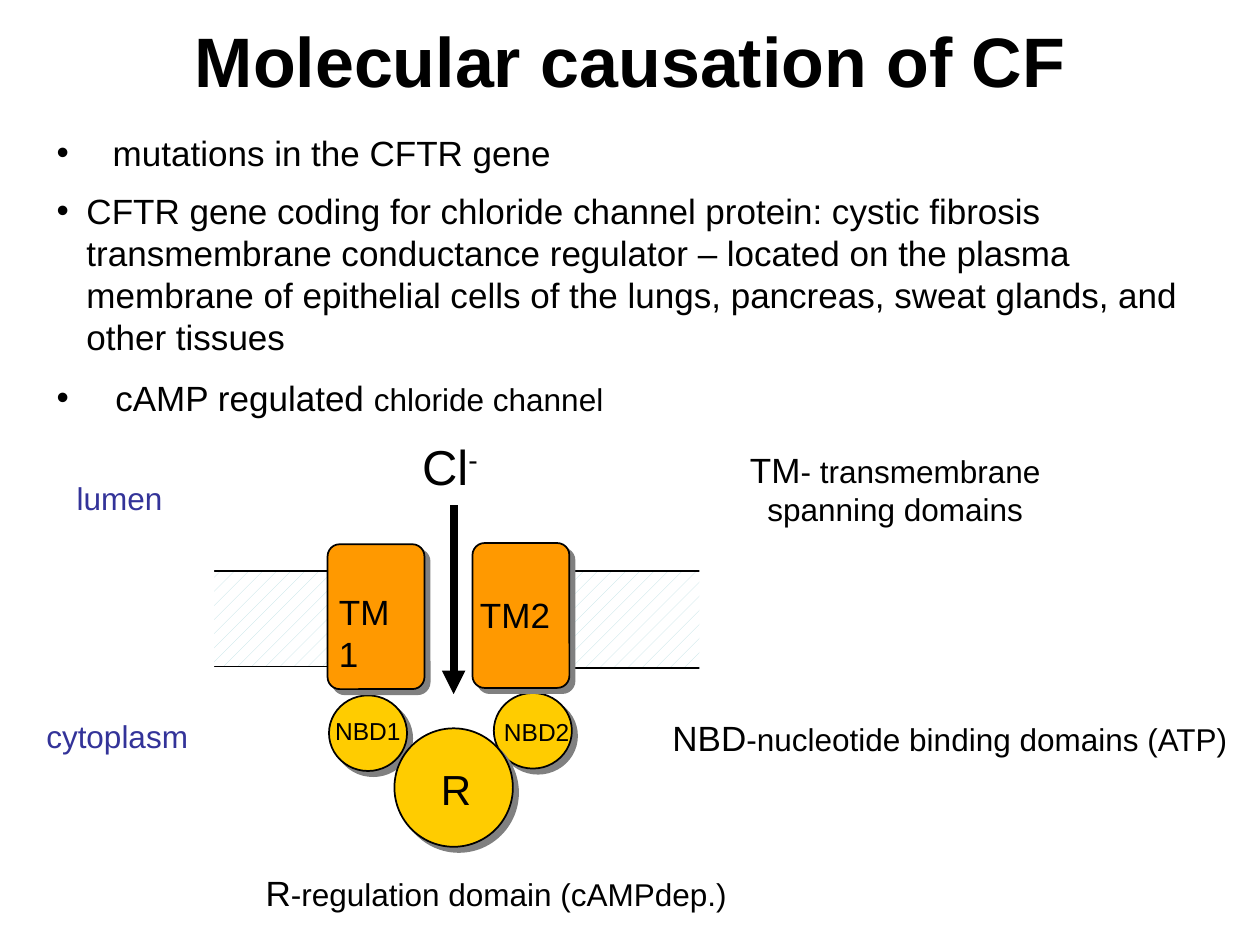
"""Build the slide on the molecular causation of CF with its chloride channel diagram."""
from dataclasses import dataclass
from typing import Optional

from lxml import etree
from pptx import Presentation
from pptx.dml.color import RGBColor
from pptx.enum.dml import MSO_PATTERN
from pptx.enum.shapes import MSO_CONNECTOR, MSO_SHAPE
from pptx.enum.text import MSO_ANCHOR, MSO_AUTO_SIZE, PP_ALIGN
from pptx.oxml.ns import qn
from pptx.util import Pt

OVAL, ROUNDED, RECTANGLE = MSO_SHAPE.OVAL, MSO_SHAPE.ROUNDED_RECTANGLE, MSO_SHAPE.RECTANGLE
STRAIGHT = MSO_CONNECTOR.STRAIGHT
LEFT, CENTER = PP_ALIGN.LEFT, PP_ALIGN.CENTER
TOP, MIDDLE = MSO_ANCHOR.TOP, MSO_ANCHOR.MIDDLE
NO_AUTOFIT = MSO_AUTO_SIZE.NONE
DOTTED = MSO_PATTERN.PERCENT_10


@dataclass(frozen=True)
class Theme:
    font: str = "Arial"
    ink: str = "000000"
    place: str = "333399"
    paper: str = "FFFFFF"
    binding: str = "FFCC00"
    spanning: str = "FF9900"
    membrane: str = "BBE0E3"
    shadow: str = "808080"
    title: float = 40
    ion: float = 28
    regulator: float = 24
    body: float = 20
    detail: float = 18
    small: float = 14


THEME = Theme()


@dataclass(frozen=True)
class Box:
    left: float
    top: float
    width: float
    height: float

    def lengths(self) -> tuple:
        return Pt(self.left), Pt(self.top), Pt(self.width), Pt(self.height)


@dataclass(frozen=True)
class Piece:
    text: str
    size: float
    color: str = THEME.ink
    bold: bool = False
    baseline: int = 0


@dataclass(frozen=True)
class Domain:
    kind: int
    box: Box
    fill: str


@dataclass(frozen=True)
class Label:
    box: Box
    lines: tuple
    align: int = LEFT
    inset: tuple = (7.2, 3.6)


@dataclass(frozen=True)
class Bullet:
    pieces: tuple
    margin: float
    space_before: float


TIGHT = (3.6, 1.44)
NBD_SIZE = (44.6, 43.2)
TM_SIZE = (55.4, 82.8)

BULLETS = (
    Bullet((Piece("mutations in the CFTR gene", THEME.body),), 32, 0),
    Bullet((Piece("CFTR gene coding for chloride channel protein: cystic fibrosis "
                  "transmembrane conductance regulator – located on the plasma membrane of "
                  "epithelial cells of the lungs, pancreas, sweat glands, and other tissues",
                  THEME.body),), 17, 9.5),
    Bullet((Piece("cAMP regulated ", THEME.body), Piece("chloride channel", THEME.detail)), 33.5, 10.5),
)
MEMBRANES = (Box(301.7, 326.2, 103.7, 55.4), Box(110.2, 326.2, 108.7, 54.7))
MEMBRANE_ENDS = (Box(399.6, 319.7, 17.3, 85), Box(105.1, 319.7, 17.3, 64))
DOMAINS = (
    Domain(OVAL, Box(282.2, 396, *NBD_SIZE), THEME.binding),
    Domain(OVAL, Box(188, 397.4, *NBD_SIZE), THEME.binding),
    Domain(OVAL, Box(225.4, 416.2, 67.7, 67.7), THEME.binding),
    Domain(ROUNDED, Box(187.2, 311, *TM_SIZE), THEME.spanning),
    Domain(ROUNDED, Box(270, 310.3, *TM_SIZE), THEME.spanning),
)
LABELS = (
    Label(Box(365, 406, 355.7, 52), ((Piece("NBD", THEME.body),
          Piece("-nucleotide binding domains (ATP)", THEME.detail)),), CENTER),
    Label(Box(248.4, 434.9, 30, 31.7), ((Piece("R", THEME.regulator),),), inset=TIGHT),
    Label(Box(187.9, 407.5, 50, 19.5), ((Piece("NBD1", THEME.small),),), inset=TIGHT),
    Label(Box(284.4, 408.2, 50, 19.5), ((Piece("NBD2", THEME.small),),), inset=TIGHT),
    Label(Box(190.1, 336.2, 44, 50), ((Piece("TM1", THEME.body),),), inset=TIGHT),
    Label(Box(270.7, 337.7, 52, 27.4), ((Piece("TM2", THEME.body),),), inset=TIGHT),
    Label(Box(237.6, 247.7, 48, 36.7),
          ((Piece("Cl", THEME.ion), Piece("-", THEME.ion, baseline=30000)),), inset=TIGHT),
    Label(Box(144.7, 494.6, 295, 45), ((Piece("R", THEME.body),
          Piece("-regulation domain (cAMPdep.)", THEME.detail)),)),
    Label(Box(416.9, 252.7, 189.4, 52.6),
          ((Piece("TM", THEME.body), Piece("- transmembrane", THEME.detail)),
           (Piece("spanning domains", THEME.detail),)), CENTER),
    Label(Box(36.7, 270, 70, 28.8), ((Piece("lumen", THEME.detail, THEME.place),),)),
    Label(Box(19.4, 406, 103.7, 28.8), ((Piece("cytoplasm", THEME.detail, THEME.place),),)),
)


def write(paragraph, text: str, *, size: float, color: str, bold: bool, baseline: int) -> None:
    run = paragraph.add_run()
    run.text = text
    run.font.name, run.font.size, run.font.bold = THEME.font, Pt(size), bold
    run.font.color.rgb = RGBColor.from_string(color)
    if baseline:
        run.font._element.set("baseline", str(baseline))


def write_pieces(paragraph, pieces: tuple) -> None:
    for piece in pieces:
        write(paragraph, piece.text, size=piece.size, color=piece.color,
              bold=piece.bold, baseline=piece.baseline)


def place(shape, box: Box, anchor: int):
    shape.left, shape.top, shape.width, shape.height = box.lengths()
    frame = shape.text_frame
    frame.word_wrap, frame.auto_size, frame.vertical_anchor = True, NO_AUTOFIT, anchor
    return frame


def draw_shape(slide, kind: int, box: Box, fill: str, outline: Optional[str] = THEME.ink):
    shape = slide.shapes.add_shape(kind, *box.lengths())
    shape.shadow.inherit = False
    shape.fill.solid()
    shape.fill.fore_color.rgb = RGBColor.from_string(fill)
    if outline:
        shape.line.color.rgb = RGBColor.from_string(outline)
        shape.line.width = Pt(1)
    else:
        shape.line.fill.background()
    return shape


def draw_membrane(slide, box: Box) -> None:
    fill = draw_shape(slide, RECTANGLE, box, THEME.paper).fill
    fill.patterned()
    fill.pattern = DOTTED
    fill.fore_color.rgb = RGBColor.from_string(THEME.membrane)
    fill.back_color.rgb = RGBColor.from_string(THEME.paper)


def draw_domain(slide, domain: Domain) -> None:
    shape = draw_shape(slide, domain.kind, domain.box, domain.fill)
    if domain.kind == ROUNDED:
        shape.adjustments[0] = 0.125
    effects = shape._element.spPr.find(qn("a:effectLst"))
    shadow = etree.SubElement(effects, qn("a:outerShdw"), dist=str(Pt(4.2)), dir="2700000",
                              algn="ctr", rotWithShape="0")
    etree.SubElement(shadow, qn("a:srgbClr"), val=THEME.shadow)


def draw_ion_flow(slide, x: float, top: float, bottom: float) -> None:
    arrow = slide.shapes.add_connector(STRAIGHT, Pt(x), Pt(top), Pt(x), Pt(bottom))
    arrow.line.color.rgb = RGBColor.from_string(THEME.ink)
    arrow.line.width = Pt(4.5)
    etree.SubElement(arrow.line._get_or_add_ln(), qn("a:tailEnd"), type="triangle")
    etree.SubElement(arrow._element.spPr, qn("a:effectLst"))


def draw_label(slide, label: Label) -> None:
    frame = place(slide.shapes.add_textbox(*label.box.lengths()), label.box, TOP)
    frame.margin_left = frame.margin_right = Pt(label.inset[0])
    frame.margin_top = frame.margin_bottom = Pt(label.inset[1])
    for index, pieces in enumerate(label.lines):
        paragraph = frame.add_paragraph() if index else frame.paragraphs[0]
        paragraph.alignment = label.align
        write_pieces(paragraph, pieces)


def fill_bullets(frame) -> None:
    for index, bullet in enumerate(BULLETS):
        paragraph = frame.add_paragraph() if index else frame.paragraphs[0]
        paragraph.space_before = Pt(bullet.space_before)
        properties = paragraph._p.get_or_add_pPr()
        properties.set("marL", str(Pt(bullet.margin)))
        properties.set("indent", str(-Pt(bullet.margin)))
        etree.SubElement(properties, qn("a:buChar"), char="•")
        write_pieces(paragraph, bullet.pieces)


def main() -> None:
    deck = Presentation()
    deck.slide_width, deck.slide_height = Pt(720), Pt(540)
    slide = deck.slides.add_slide(deck.slide_layouts[1])
    heading = place(slide.shapes.title, Box(36, 3.6, 648, 61.2), MIDDLE).paragraphs[0]
    heading.alignment = CENTER
    write_pieces(heading, (Piece("Molecular causation of CF", THEME.title, bold=True),))
    fill_bullets(place(slide.placeholders[1], Box(25.2, 71.3, 680.4, 171.4), TOP))
    for membrane in MEMBRANES:
        draw_membrane(slide, membrane)
    for domain in DOMAINS:
        draw_domain(slide, domain)
    draw_ion_flow(slide, 259.2, 288.7, 396.7)
    for end in MEMBRANE_ENDS:
        draw_shape(slide, RECTANGLE, end, THEME.paper, outline=None)
    for label in LABELS:
        draw_label(slide, label)
    deck.save("out.pptx")


if __name__ == "__main__":
    main()
